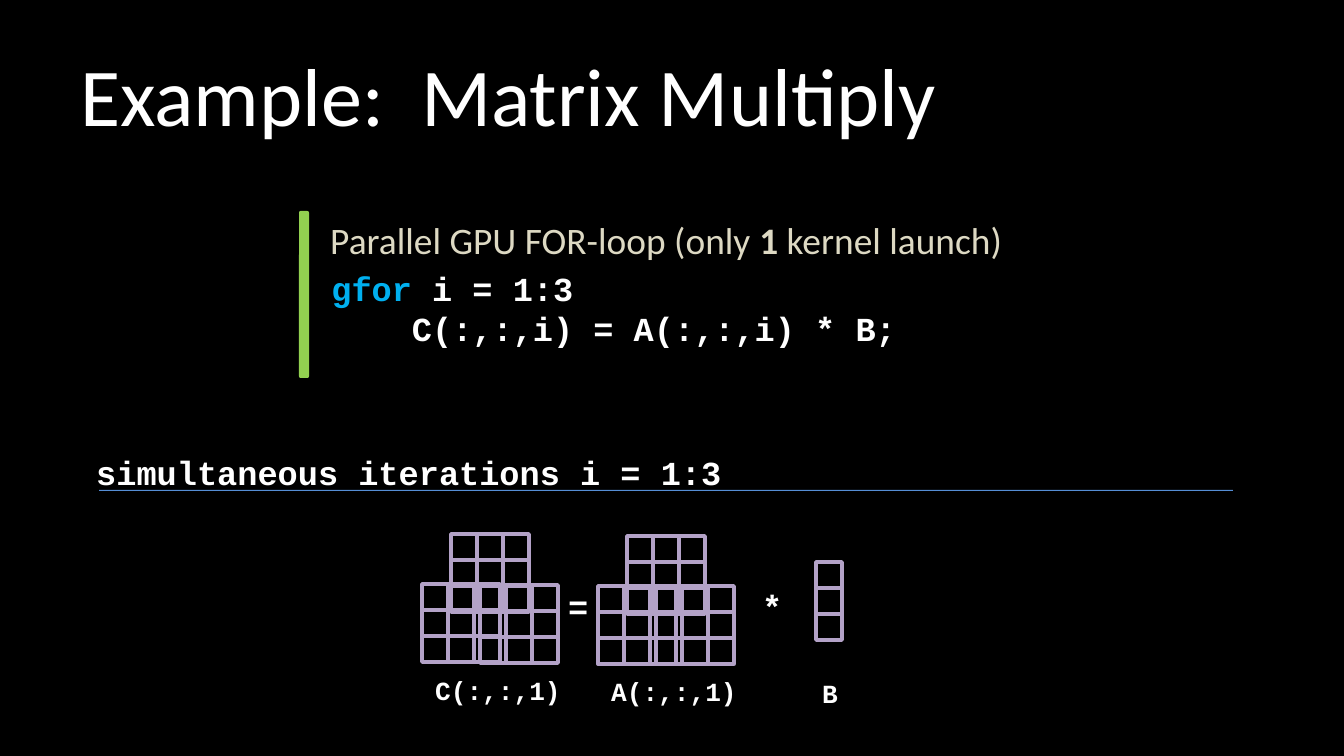
"""Build the matrix multiply slide."""
import pptx
import pptx.util
import pptx.dml.color
import pptx.enum.shapes
import pptx.enum.text

SCALE = 914400 / 134.4
CELL = 26
HUES = {"back": "000000", "text": "FFFFFF", "note": "DDD9C3", "key": "00B0F0",
        "bar": "92D050", "rule": "558ED5", "cell": "B3A2C7"}
MONO = "Courier New"
SANS = "Calibri"
KIND = pptx.enum.shapes.MSO_SHAPE


def px(num):
    return pptx.util.Emu(round(num * SCALE))


def hue(name):
    return pptx.dml.color.RGBColor.from_string(HUES[name])


def add_text(slide, area, lines, size, face=MONO, tone="text", bold=True, wrap=True):
    """Add a text box; each line is a list of (words, run settings)."""
    box = slide.shapes.add_textbox(*map(px, area))
    frame = box.text_frame
    frame.word_wrap = wrap
    for i, line in enumerate(lines):
        para = frame.add_paragraph() if i else frame.paragraphs[0]
        font = para.font
        font.name, font.size, font.bold = face, pptx.util.Pt(size), bold
        font.color.rgb = hue(tone)
        for words, style in line:
            run = para.add_run()
            run.text = words
            if "tone" in style:
                run.font.color.rgb = hue(style["tone"])
            if "bold" in style:
                run.font.bold = style["bold"]
    return frame


def add_bar(slide, area, tone):
    bar = slide.shapes.add_shape(KIND.ROUNDED_RECTANGLE, *map(px, area))
    bar.shadow.inherit = False
    bar.fill.solid()
    bar.fill.fore_color.rgb = hue(tone)
    bar.line.fill.background()


def add_grid(slide, left, top, cols=3, rows=3):
    for row in range(rows):
        for col in range(cols):
            area = (left + col * CELL, top + row * CELL, CELL, CELL)
            cell = slide.shapes.add_shape(KIND.RECTANGLE, *map(px, area))
            cell.shadow.inherit = False
            cell.fill.background()
            cell.line.color.rgb = hue("cell")
            cell.line.width = pptx.util.Pt(2)


def main():
    deck = pptx.Presentation()
    deck.slide_width, deck.slide_height = px(1344), px(756)
    slide = deck.slides.add_slide(deck.slide_layouts[6])
    slide.background.fill.solid()
    slide.background.fill.fore_color.rgb = hue("back")

    title = add_text(slide, (67, 31, 1210, 126), [[("Example:  Matrix Multiply", {})]],
                     44, SANS, bold=False)
    title.vertical_anchor = pptx.enum.text.MSO_ANCHOR.MIDDLE

    add_bar(slide, (299, 211, 10, 167), "bar")
    add_text(slide, (317, 211, 706, 59),
             [[("Parallel GPU FOR-loop (only ", {}), ("1", {"bold": True}),
               (" kernel launch)", {})]], 20, SANS, "note", False, False)
    add_text(slide, (298, 261, 672, 95),
             [[(" ", {}), ("gfor ", {"tone": "key"}), ("i = 1:3", {})],
              [("     C(:,:,i) = A(:,:,i) * B;", {})]], 18)

    add_text(slide, (83, 445, 891, 54), [[("simultaneous iterations i = 1:3", {})]], 18)
    add_bar(slide, (99, 490, 1134, 1), "rule")

    for left, top in ((480, 585), (422, 584), (451, 534),
                      (656, 586), (598, 586), (627, 536)):
        add_grid(slide, left, top)
    add_grid(slide, 816, 562, cols=1)

    for words, left, top, wide, high, size in (
            ("=", 555, 579, 47, 54, 18), ("*", 749, 579, 47, 54, 18),
            ("C(:,:,1)", 422, 668, 153, 46, 14),
            ("A(:,:,1)", 598, 669, 153, 46, 14),
            ("B", 809, 671, 43, 46, 14)):
        add_text(slide, (left, top, wide, high), [[(words, {})]], size, wrap=False)
    deck.save("out.pptx")


if __name__ == "__main__":
    main()
